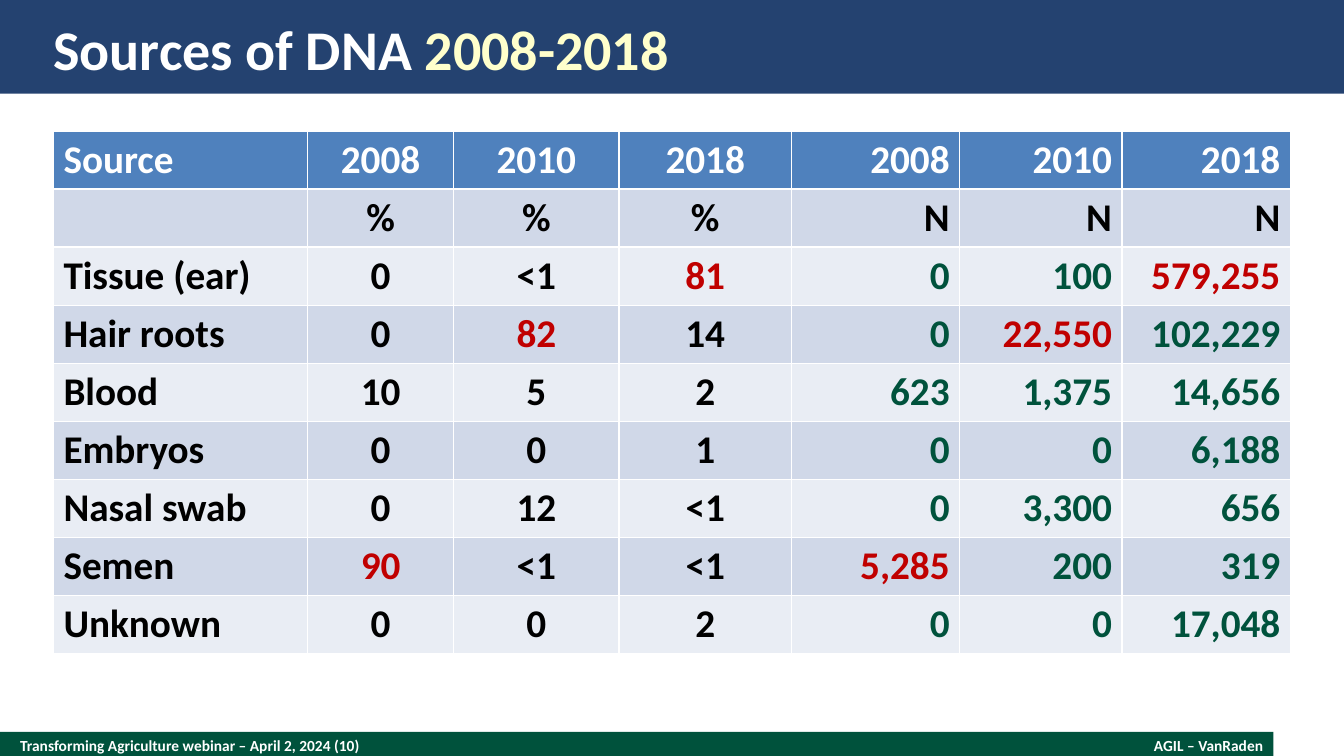
from pptx import Presentation
from pptx.dml.color import RGBColor
from pptx.enum.shapes import MSO_SHAPE
from pptx.enum.text import MSO_ANCHOR, MSO_AUTO_SIZE, PP_ALIGN
from pptx.util import Inches, Pt

COLORS = {
    "navy": "244270", "green": "00523C", "white": "FFFFFF", "cream": "FFFFCC",
    "header": "4F81BD", "band_dark": "D0D8E8", "band_light": "E9EDF4",
    "black": "000000", "red": "C00000",
}


def color(name):
    return RGBColor.from_string(COLORS[name])


def format_text(tf, size, name, align):
    """Format the first paragraph of a frame."""
    p = tf.paragraphs[0]
    p.alignment = align
    p.font.name = "Calibri"
    p.font.size = Pt(size)
    p.font.bold = True
    p.font.color.rgb = color(name)


prs = Presentation()
prs.slide_width, prs.slide_height = Inches(13.33), Inches(7.5)
s = prs.slides.add_slide(prs.slide_layouts[5])

# Footer and title bands
bands = [("green", 0, 7.26, 12.63, 0.27), ("navy", 0, 0, 13.33, 0.93)]
for name, *box in bands:
    sp = s.shapes.add_shape(MSO_SHAPE.RECTANGLE, *map(Inches, box))
    sp.shadow.inherit = False
    sp.fill.solid()
    sp.fill.fore_color.rgb = color(name)
    sp.line.fill.background()

# Title, brought in front of its band
title = s.shapes.title
title.element.getparent().append(title.element)
title.left, title.top = Inches(0.53), Inches(0.13)
title.width, title.height = Inches(12.27), Inches(0.7)
title.text_frame.text = "Sources of DNA "
years = title.text_frame.paragraphs[0].add_run()
years.text = "2008-2018"
format_text(title.text_frame, 40, "white", PP_ALIGN.LEFT)
years.font.color.rgb = color("cream")

# Footer texts
footers = [
    ("Transforming Agriculture webinar – April 2, 2024 (10)",
     PP_ALIGN.LEFT, 0.2, 7.26, 8.67, 0.27),
    ("AGIL – VanRaden", PP_ALIGN.RIGHT, 9.6, 7.3, 2.93, 0.19),
]
for text, align, *box in footers:
    sp = s.shapes.add_textbox(*map(Inches, box))
    sp.text_frame.text = text
    format_text(sp.text_frame, 11, "white", align)

# Title and footers share tight, vertically centred frames
for sp in list(s.shapes)[-3:]:
    tf = sp.text_frame
    tf.word_wrap = True
    tf.auto_size = MSO_AUTO_SIZE.NONE
    tf.vertical_anchor = MSO_ANCHOR.MIDDLE
    tf.margin_left = tf.margin_right = tf.margin_top = tf.margin_bottom = 0

# Table of DNA sources: shares, then counts
rows = [
    ("Source", "2008", "2010", "2018", "2008", "2010", "2018"),
    ("", "%", "%", "%", "N", "N", "N"),
    ("Tissue (ear)", "0", "<1", "81", "0", "100", "579,255"),
    ("Hair roots", "0", "82", "14", "0", "22,550", "102,229"),
    ("Blood", "10", "5", "2", "623", "1,375", "14,656"),
    ("Embryos", "0", "0", "1", "0", "0", "6,188"),
    ("Nasal swab", "0", "12", "<1", "0", "3,300", "656"),
    ("Semen", "90", "<1", "<1", "5,285", "200", "319"),
    ("Unknown", "0", "0", "2", "0", "0", "17,048"),
]
col_widths = [2.52, 1.45, 1.64, 1.71, 1.67, 1.61, 1.67]
aligns = [PP_ALIGN.LEFT] + [PP_ALIGN.CENTER] * 3 + [PP_ALIGN.RIGHT] * 3
leading_values = {"81", "82", "90", "579,255", "22,550", "5,285"}
row_height = 0.57

table = s.shapes.add_table(
    len(rows), len(col_widths), Inches(0.53), Inches(1.3),
    Inches(sum(col_widths)), Inches(row_height * len(rows))).table
for col, width in zip(table.columns, col_widths):
    col.width = Inches(width)

for i, row in enumerate(rows):
    table.rows[i].height = Inches(row_height)
    fill = "header" if i == 0 else "band_dark" if i % 2 else "band_light"
    for j, text in enumerate(row):
        cell = table.cell(i, j)
        cell.fill.solid()
        cell.fill.fore_color.rgb = color(fill)
        cell.text = text
        if i == 0:
            ink = "white"
        elif text in leading_values:
            ink = "red"
        else:
            ink = "green" if i > 1 and j > 3 else "black"
        format_text(cell.text_frame, 28, ink, aligns[j])

prs.save("out.pptx")
